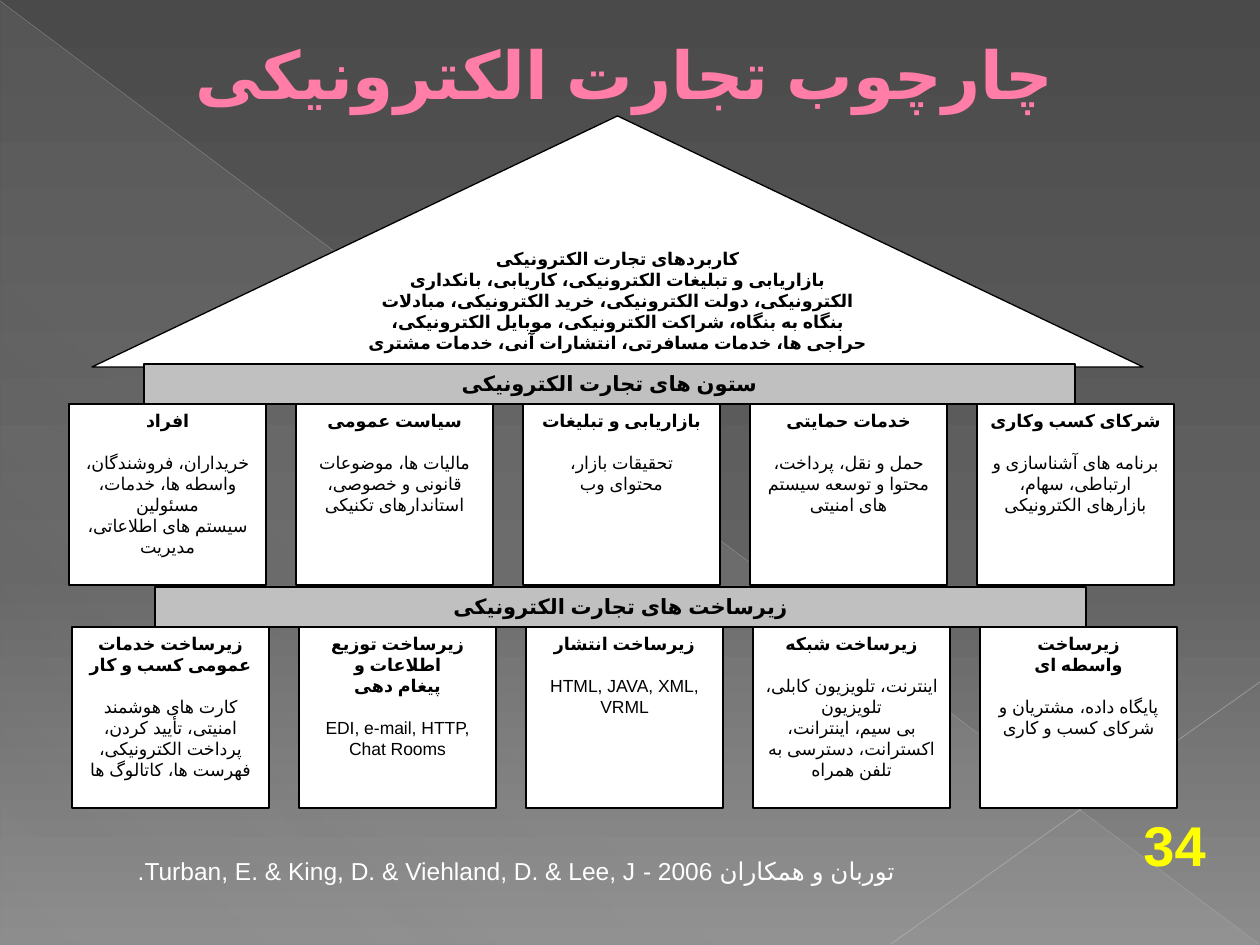
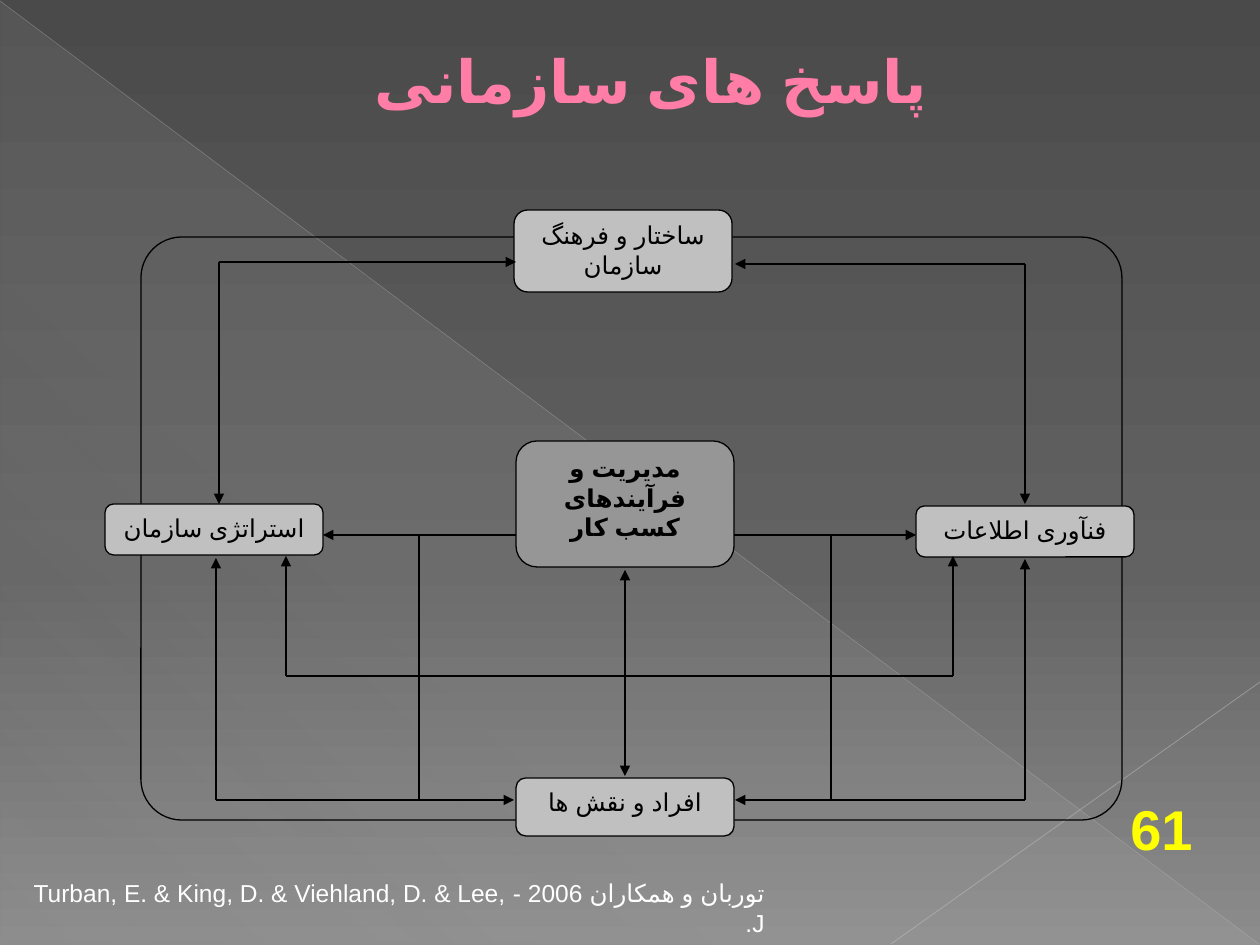
from dataclasses import dataclass

from lxml import etree
from pptx import Presentation
from pptx import util as u
from pptx.dml import color
from pptx.enum import lang, shapes, text
from pptx.oxml import ns

EMU_PER_PX = 914400 / 126
SHAPE = shapes.MSO_SHAPE
CENTER, LEFT, RIGHT = text.PP_ALIGN.CENTER, text.PP_ALIGN.LEFT, text.PP_ALIGN.RIGHT


@dataclass(frozen=True)
class Theme:
    """Colours, fonts and type sizes of the deck."""
    ink: str = "000000"
    paper: str = "FFFFFF"
    band: str = "C0C0C0"
    core: str = "969696"
    title: str = "FF7DA7"
    title_edge: str = "B12761"
    number: str = "FFFF00"
    body_font: str = "Arial"
    title_font: str = "TeX Gyre Adventor"
    card_size: int = 10
    band_size: int = 12
    node_size: int = 14
    number_size: int = 32
    line: float = 0.75
    sky: tuple = ((0, "4A4A4A", 100), (60, "626262", 100), (100, "8C8C8C", 100))
    sheen: tuple = ((0, "D2D2D2", 10), (70, "D2D2D2", 8), (100, "D2D2D2", 1))
    rays: tuple = (((0, 1, 1259, 944), "BFBFBF", 0.39, 35),
                   ((1260, 682, 891, 944), "C6C6C6", 0.47, 45))


T = Theme()

PILLARS = [
    (["افراد"], ["خریداران، فروشندگان،", "واسطه ها، خدمات، مسئولین", "سیستم های اطلاعاتی، مدیریت"]),
    (["سیاست عمومی"], ["مالیات ها، موضوعات قانونی و خصوصی، استاندارهای تکنیکی"]),
    (["بازاریابی و تبلیغات"], ["تحقیقات بازار،", "محتوای وب"]),
    (["خدمات حمایتی"], ["حمل و نقل، پرداخت، محتوا و توسعه سیستم های امنیتی"]),
    (["شرکای کسب وکاری"], ["برنامه های آشناسازی و ارتباطی، سهام، بازارهای الکترونیکی"]),
]
INFRASTRUCTURE = [
    (["زیرساخت خدمات عمومی کسب و کار"],
     ["کارت های هوشمند امنیتی، تأیید کردن، پرداخت الکترونیکی، فهرست ها، کاتالوگ ها"]),
    (["زیرساخت توزیع اطلاعات و", "پیغام دهی"], ["EDI, e-mail, HTTP, Chat Rooms"]),
    (["زیرساخت انتشار"], ["HTML, JAVA, XML, VRML"]),
    (["زیرساخت شبکه"],
     ["اینترنت، تلویزیون کابلی، تلویزیون", "بی سیم، اینترانت، اکسترانت، دسترسی به تلفن همراه"]),
    (["زیرساخت", "واسطه ای"], ["پایگاه داده، مشتریان و شرکای کسب و کاری"]),
]
ROOF = [
    "کاربردهای تجارت الکترونیکی",
    "بازاریابی و تبلیغات الکترونیکی، کاریابی، بانکداری الکترونیکی، دولت الکترونیکی، "
    "خرید الکترونیکی، مبادلات بنگاه به بنگاه، شراکت الکترونیکی، موبایل الکترونیکی، "
    "حراجی ها، خدمات مسافرتی، انتشارات آنی، خدمات مشتری",
]
CITATION = "توربان و همکاران 2006 - Turban, E. & King, D. & Viehland, D. & Lee, J."
NODE_W = 218
NODES = [
    ("ساختار و فرهنگ سازمان", (514, 210, NODE_W, 82), T.band),
    ("استراتژی سازمان", (105, 504, NODE_W, 51), T.band),
    ("فنآوری اطلاعات", (916, 506, NODE_W, 51), T.band),
    ("مدیریت و فرآیندهای کسب کار", (516, 441, NODE_W, 126), T.core),
    ("افراد و نقش ها", (516, 778, NODE_W, 58), T.band),
]
BENDS = [
    ((1025, 800), (1025, 559), (735, 800)),
    ((1025, 264), (735, 264), (1025, 504)),
    ((219, 262), (516, 262), (219, 504)),
    ((216, 800), (514, 800), (216, 558)),
]


def px(*values):
    """Turn px lengths into EMU."""
    return [u.Emu(round(v * EMU_PER_PX)) for v in values]


def rgb(value):
    """Return the colour object of a hex string."""
    return color.RGBColor.from_string(value)


def apply(obj, **fmt):
    """Set every given attribute on an object."""
    for name, value in fmt.items():
        setattr(obj, name, value)


def node(parent, tag, **attrs):
    """Append a DrawingML element."""
    return etree.SubElement(parent, ns.qn(tag), {k: str(v) for k, v in attrs.items()})


def gradient(fill, root, stops, angle):
    """Give a fill a linear gradient with (position, colour, opacity) stops."""
    fill.gradient()
    grad = next(root.iter(ns.qn("a:gradFill")))
    for child in list(grad):
        grad.remove(child)
    gs_list = node(grad, "a:gsLst")
    for pos, value, alpha in stops:
        gs = node(gs_list, "a:gs", pos=pos * 1000)
        node(node(gs, "a:srgbClr", val=value), "a:alpha", val=alpha * 1000)
    node(grad, "a:lin", ang=angle * 60000, scaled=0)


def write(p, words, size, value, bold=False, align=CENTER, font=T.body_font):
    """Write one formatted run, in Persian and right to left unless it is all Latin."""
    p.alignment = align
    r = p.add_run()
    r.text = words
    apply(r.font, size=u.Pt(size), bold=bold, name=font)
    r.font.color.rgb = rgb(value)
    if not words.isascii() or words.isdigit():
        p._p.get_or_add_pPr().set("rtl", "1")
        r.font.language_id = lang.MSO_LANGUAGE_ID.FARSI
    node(r.font._element, "a:cs", typeface=font)
    return r


def paragraphs(tf, lines):
    """Yield one paragraph with each line, starting from the existing one."""
    for i, line in enumerate(lines):
        yield (tf.add_paragraph() if i else tf.paragraphs[0]), line


def add_box(slide, kind, box, fill=None):
    """Add an outlined preset shape with top-anchored text."""
    sp = slide.shapes.add_shape(kind, *px(*box))
    sp.shadow.inherit = False
    if fill:
        sp.fill.solid()
        sp.fill.fore_color.rgb = rgb(fill)
    else:
        sp.fill.background()
    sp.line.color.rgb = rgb(T.ink)
    sp.line.width = u.Pt(T.line)
    apply(sp.text_frame, word_wrap=True, vertical_anchor=text.MSO_ANCHOR.TOP)
    return sp


def add_label(slide, kind, box, fill, lines, size, bold=True):
    """Add a shape with centred lines in one style."""
    tf = add_box(slide, kind, box, fill).text_frame
    for p, line in paragraphs(tf, lines):
        write(p, line, size, T.ink, bold)


def add_cards(slide, left, top, cards):
    """Add a row of cards, each with a bold heading above its details."""
    for i, (heading, details) in enumerate(cards):
        tf = add_box(slide, SHAPE.RECTANGLE, (left + 227 * i, top, 197, 181), T.paper).text_frame
        for p, line in paragraphs(tf, heading + details):
            write(p, line, T.card_size, T.ink, line in heading)
        tf.paragraphs[len(heading)].space_before = u.Pt(12)


def add_line(slide, start, end, ends=(), value=T.ink, width=T.line):
    """Add a straight line with triangle arrowheads at the named ends."""
    c = slide.shapes.add_connector(shapes.MSO_CONNECTOR.STRAIGHT, *px(*start, *end))
    c.line.color.rgb = rgb(value)
    c.line.width = u.Pt(width)
    for end_tag in ends:
        node(c.line._get_or_add_ln(), end_tag, type="triangle")
    node(c.element.spPr, "a:effectLst")
    return c


def add_bend(slide, corner, *tips):
    """Add arrows that leave one corner for each tip."""
    for tip in tips:
        add_line(slide, corner, tip, ["a:tailEnd"])


def add_text(slide, box, words, size, value, **fmt):
    """Add a wrapped text box with one paragraph."""
    tf = slide.shapes.add_textbox(*px(*box)).text_frame
    tf.word_wrap = True
    write(tf.paragraphs[0], words, size, value, **fmt)


def add_slide(prs, title, box, size, number, number_at, citation_box):
    """Add a slide with its title, number and citation."""
    slide = prs.slides.add_slide(prs.slide_layouts[5])
    sp = slide.shapes.title
    apply(sp, **dict(zip(("left", "top", "width", "height"), px(*box))))
    apply(sp.text_frame, word_wrap=True, auto_size=text.MSO_AUTO_SIZE.NONE,
          vertical_anchor=text.MSO_ANCHOR.MIDDLE)
    r = write(sp.text_frame.paragraphs[0], title, size, T.title, True, font=T.title_font)
    edge = etree.Element(ns.qn("a:ln"), w=str(u.Pt(0.5)))
    node(node(edge, "a:solidFill"), "a:srgbClr", val=T.title_edge)
    r.font._element.insert(0, edge)
    add_text(slide, (*number_at, 98, 73), number, T.number_size, T.number, bold=True, align=LEFT)
    add_text(slide, citation_box, CITATION, T.node_size, T.paper, align=RIGHT)
    return slide


def dress_master(prs, slide):
    """Put the backdrop, sheen and rays on the slide master."""
    master = prs.slide_master
    gradient(master.background.fill, master.element, T.sky, 90)
    sheen = add_box(slide, SHAPE.RIGHT_TRIANGLE, (1, 2, 1258, 942))
    gradient(sheen.fill, sheen.element, T.sheen, 133)
    sheen.line.fill.background()
    decor = [sheen]
    for ends, value, width, alpha in T.rays:
        ray = add_line(slide, ends[:2], ends[2:], value=value, width=width)
        node(next(ray.element.spPr.iter(ns.qn("a:srgbClr"))), "a:alpha", val=alpha * 1000)
        decor.append(ray)
    for i, sp in enumerate(decor):
        sp.element.xpath(".//p:cNvPr")[0].set("id", str(100 + i))
        master.shapes._spTree.insert(2 + i, sp.element)


def build_framework(prs):
    """Build the house of electronic commerce."""
    slide = add_slide(prs, "چارچوب تجارت الکترونیکی", (152, 26, 945, 95), 37.8,
                      "34", (1131, 804), (73, 850, 834, 42))
    dress_master(prs, slide)
    add_label(slide, SHAPE.FLOWCHART_EXTRACT, (92, 116, 1051, 251), T.paper, ROOF, T.card_size)
    for band, left, top, card_left, cards in (
            ("ستون های تجارت الکترونیکی", 144, 364, 69, PILLARS),
            ("زیرساخت های تجارت الکترونیکی", 155, 587, 72, INFRASTRUCTURE)):
        add_label(slide, SHAPE.RECTANGLE, (left, top, 931, 40), T.band, [band], T.band_size)
        add_cards(slide, card_left, top + 40, cards)


def build_responses(prs):
    """Build the diagram of organisational responses."""
    slide = add_slide(prs, "پاسخ های سازمانی", (84, 32, 1134, 95), 34,
                      "61", (1118, 788), (8, 872, 769, 42))
    frame = add_box(slide, SHAPE.ROUNDED_RECTANGLE, (141, 237, 981, 583))
    frame.adjustments[0] = 0.07
    for words, box, fill in NODES:
        add_label(slide, SHAPE.FLOWCHART_ALTERNATE_PROCESS, box, fill, [words],
                  T.node_size, fill == T.core)
    for bend in BENDS:
        add_bend(slide, *bend)
    for x, node_x, branch_x in ((734, 916, 831), (516, 323, 419)):
        add_bend(slide, (x, 535), (node_x, 535))
        add_line(slide, (branch_x, 535), (branch_x, 799))
    add_line(slide, (625, 570), (625, 776), ["a:headEnd", "a:tailEnd"])
    add_line(slide, (286, 676), (953, 676))
    for x in (286, 953):
        add_bend(slide, (x, 676), (x, 556))


def main():
    """Build both slides and save the deck."""
    prs = Presentation()
    apply(prs, slide_width=u.Inches(10), slide_height=u.Inches(7.5))
    build_framework(prs)
    build_responses(prs)
    prs.save("out.pptx")


if __name__ == "__main__":
    main()
